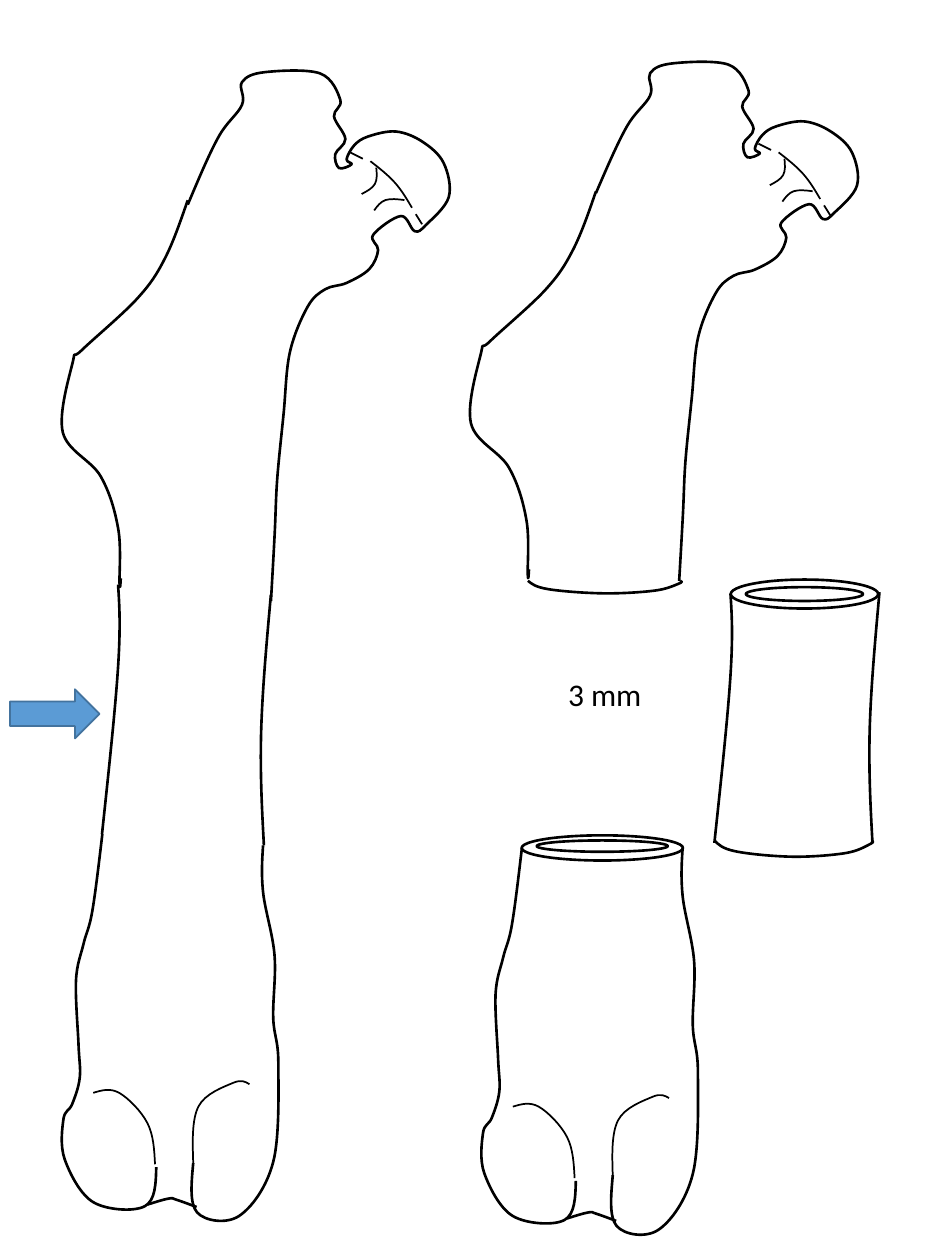
import pptx
import pptx.dml.color
import pptx.enum.shapes
import pptx.enum.text
import pptx.oxml.ns
import pptx.util
from lxml import etree

Inches = pptx.util.Inches
Shapes = pptx.enum.shapes.MSO_SHAPE
COLOURS = {"ink": "000000", "arrow": "5B9BD5", "arrow edge": "43739E"}
BOLD, FINE = 1.5, 1

# Points, in inches, that each smooth stroke passes through
STROKES = {
    "head": [
        (1.48, 1.62), (1.72, 1.09), (1.91, 0.83), (1.91, 0.65), (2.09, 0.57), (2.53, 0.58),
        (2.69, 0.79), (2.64, 0.92), (2.73, 1.1), (2.65, 1.22), (2.68, 1.33), (2.78, 1.3),
        (2.74, 1.26), (2.8, 1.15), (2.91, 1.08), (3.13, 1.04), (3.34, 1.12), (3.51, 1.29),
        (3.55, 1.56), (3.37, 1.78), (3.28, 1.83), (3.17, 1.71), (2.95, 1.86), (2.99, 1.98),
        (2.92, 2.13), (2.74, 2.24), (2.57, 2.29), (2.43, 2.43), (2.29, 2.79), (2.24, 3.28),
        (2.19, 3.79), (2.17, 4.22), (2.14, 4.76)],
    "trochanter": [
        (1.48, 1.59), (1.3, 2.05), (1.08, 2.37), (0.64, 2.78), (0.57, 2.87), (0.49, 3.43),
        (0.79, 3.78), (0.93, 4.2), (0.94, 4.63), (0.95, 4.59)],
    "neck ridge": [(2.93, 1.28), (3.13, 1.45), (3.27, 1.65)],
    "upper fold": [(2.99, 1.34), (2.98, 1.47), (2.88, 1.55)],
    "lower fold": [(3.22, 1.58), (3.07, 1.58), (2.98, 1.65)],
    "upper dash": [(2.78, 1.21), (2.89, 1.26)],
    "lower dash": [(3.3, 1.7), (3.35, 1.78)],
    "left condyle": [
        (0.81, 6.62), (0.73, 7.23), (0.66, 7.49), (0.6, 7.78), (0.62, 8.29), (0.63, 8.55),
        (0.57, 8.76), (0.5, 8.88), (0.51, 9.2), (0.74, 9.54), (1.15, 9.57), (1.24, 9.26)],
    "right condyle": [
        (1.54, 9.23), (1.57, 9.62), (1.9, 9.65), (2.17, 9.22), (2.21, 8.44), (2.17, 8.08),
        (2.18, 7.58), (2.09, 7.08), (2.09, 6.71)],
    "left arch": [(1.24, 9.24), (1.18, 8.92), (0.95, 8.68), (0.74, 8.68)],
    "right arch": [(1.54, 9.23), (1.58, 8.78), (1.85, 8.59), (1.98, 8.6)],
    "notch": [(1.17, 9.57), (1.34, 9.52), (1.4, 9.53), (1.56, 9.59)],
    "left side": [(0.94, 4.64), (0.94, 5.29), (0.81, 6.61)],
    "right side": [(2.14, 4.72), (2.07, 5.81), (2.09, 6.71)],
    "cut edge": [(4.19, 4.61), (4.35, 4.67), (4.79, 4.7), (5.2, 4.68), (5.39, 4.63), (5.4, 4.61)],
}


def colour(name):
    return pptx.dml.color.RGBColor.from_string(COLOURS[name])


def style(shape, weight, edge="ink", fill=None):
    shape.shadow.inherit = False
    if fill:
        shape.fill.solid()
        shape.fill.fore_color.rgb = colour(fill)
    else:
        shape.fill.background()
    shape.line.color.rgb = colour(edge)
    shape.line.width = pptx.util.Pt(weight)


def mix(*terms):
    """Weighted sum of points."""
    return tuple(sum(weight * point[axis] for weight, point in terms) for axis in (0, 1))


def spline(points):
    """Bezier curves through the points; each tangent follows the neighbours."""
    curves = []
    last = len(points) - 2
    for i in range(last + 1):
        start, end = points[i], points[i + 1]
        leave = mix((1, start), (1 / 6, end), (-1 / 6, points[i - 1])) if i else None
        arrive = mix((1, end), (1 / 6, start), (-1 / 6, points[i + 2])) if i < last else None
        leave = leave or mix((0.5, start), (0.5, arrive or end))
        arrive = arrive or mix((0.5, leave), (0.5, end))
        curves.append((start, leave, arrive, end))
    return curves


def bezier(curve, t):
    weights = ((1 - t) ** 3, 3 * t * (1 - t) ** 2, 3 * t * t * (1 - t), t ** 3)
    return mix(*zip(weights, curve))


def stroke(page, name, left, top, width, height, weight=BOLD):
    """Draw a named stroke stretched to the given box, with true curves."""
    points = [(Inches(x), Inches(y)) for x, y in STROKES[name]]
    curves = spline(points)
    # Sampled points give the extent of the curves
    builder = page.shapes.build_freeform(*points[0])
    builder.add_line_segments([bezier(c, n / 12) for c in curves for n in range(1, 13)], close=False)
    shape = builder.convert_to_shape()
    tag = pptx.oxml.ns.qn
    route = next(shape._element.iter(tag("a:path")))
    for segment in route.findall(tag("a:lnTo")):
        route.remove(segment)
    for curve in curves:
        segment = etree.SubElement(route, tag("a:cubicBezTo"))
        for x, y in curve[1:]:
            etree.SubElement(segment, tag("a:pt"),
                             x=str(round(x - shape.left)), y=str(round(y - shape.top)))
    shape.left, shape.top = Inches(left), Inches(top)
    shape.width, shape.height = Inches(width), Inches(height)
    style(shape, weight)


def upper_bone(page, left, top, height):
    stroke(page, "head", left + 1, top, 2.08, height)
    stroke(page, "trochanter", left, top + 1.03, 1, 3.07)
    for name, x, y, w, h in (("neck ridge", 2.45, 0.72, 0.33, 0.37),
                             ("upper fold", 2.38, 0.77, 0.12, 0.21),
                             ("lower fold", 2.48, 1.02, 0.24, 0.09),
                             ("upper dash", 2.29, 0.65, 0.1, 0.05),
                             ("lower dash", 2.81, 1.14, 0.05, 0.08)):
        stroke(page, name, left + x, top + y, w, h, FINE)


def lower_bone(page, left, top, right_top):
    stroke(page, "left condyle", left, top, 0.75, 2.98)
    stroke(page, "right condyle", left + 1.03, top + right_top, 0.69, 3.07 - right_top)
    stroke(page, "left arch", left + 0.25, top + 2.03, 0.49, 0.59, FINE)
    stroke(page, "right arch", left + 1.04, top + 1.96, 0.45, 0.65, FINE)
    stroke(page, "notch", left + 0.68, top + 2.89, 0.39, 0.07)


def shaft(page, left, top, right_x, right_y):
    stroke(page, "left side", left, top, 0.14, 1.98)
    stroke(page, "right side", left + right_x, top + right_y, 0.08, 1.99)


def ring(page, left, top, width, height, inner_top, inner_height):
    wall = 0.12
    for box in ((left, top, width, height),
                (left + wall, top + inner_top, width - 2 * wall, inner_height)):
        style(page.shapes.add_shape(Shapes.OVAL, *map(Inches, box)), BOLD)


def label(page, text, *box):
    frame = page.shapes.add_textbox(*map(Inches, box)).text_frame
    frame.word_wrap = False
    frame.auto_size = pptx.enum.text.MSO_AUTO_SIZE.SHAPE_TO_FIT_TEXT
    para = frame.paragraphs[0]
    para.text = text
    para.font.name = "Calibri"
    para.font.size = pptx.util.Pt(18)
    para.font.color.rgb = colour("ink")


def main():
    deck = pptx.Presentation()
    deck.slide_width, deck.slide_height = Inches(7.5), Inches(10)
    page = deck.slides.add_slide(deck.slide_layouts[6])

    # Whole bone
    upper_bone(page, 0.49, 0.56, 4.21)
    lower_bone(page, 0.49, 6.62, 0.09)
    shaft(page, 0.81, 4.64, 1.26, 0.08)

    # Cut bone: upper end, lower end and the removed piece
    upper_bone(page, 3.73, 0.49, 4.12)
    stroke(page, "cut edge", 4.19, 4.61, 1.22, 0.1)
    lower_bone(page, 3.82, 6.73, 0)
    ring(page, 4.14, 6.63, 1.28, 0.2, 0.04, 0.09)
    shaft(page, 5.67, 4.71, 1.23, -0.01)
    stroke(page, "cut edge", 5.67, 6.67, 1.26, 0.13)
    ring(page, 5.8, 4.6, 1.17, 0.23, 0.06, 0.11)

    # Gap size and cut level
    label(page, "3 mm", 4.41, 5.31, 0.79, 0.4)
    arrow = page.shapes.add_shape(Shapes.RIGHT_ARROW, *map(Inches, (0.08, 5.47, 0.71, 0.39)))
    style(arrow, FINE, "arrow edge", "arrow")
    deck.save("out.pptx")


if __name__ == "__main__":
    main()
